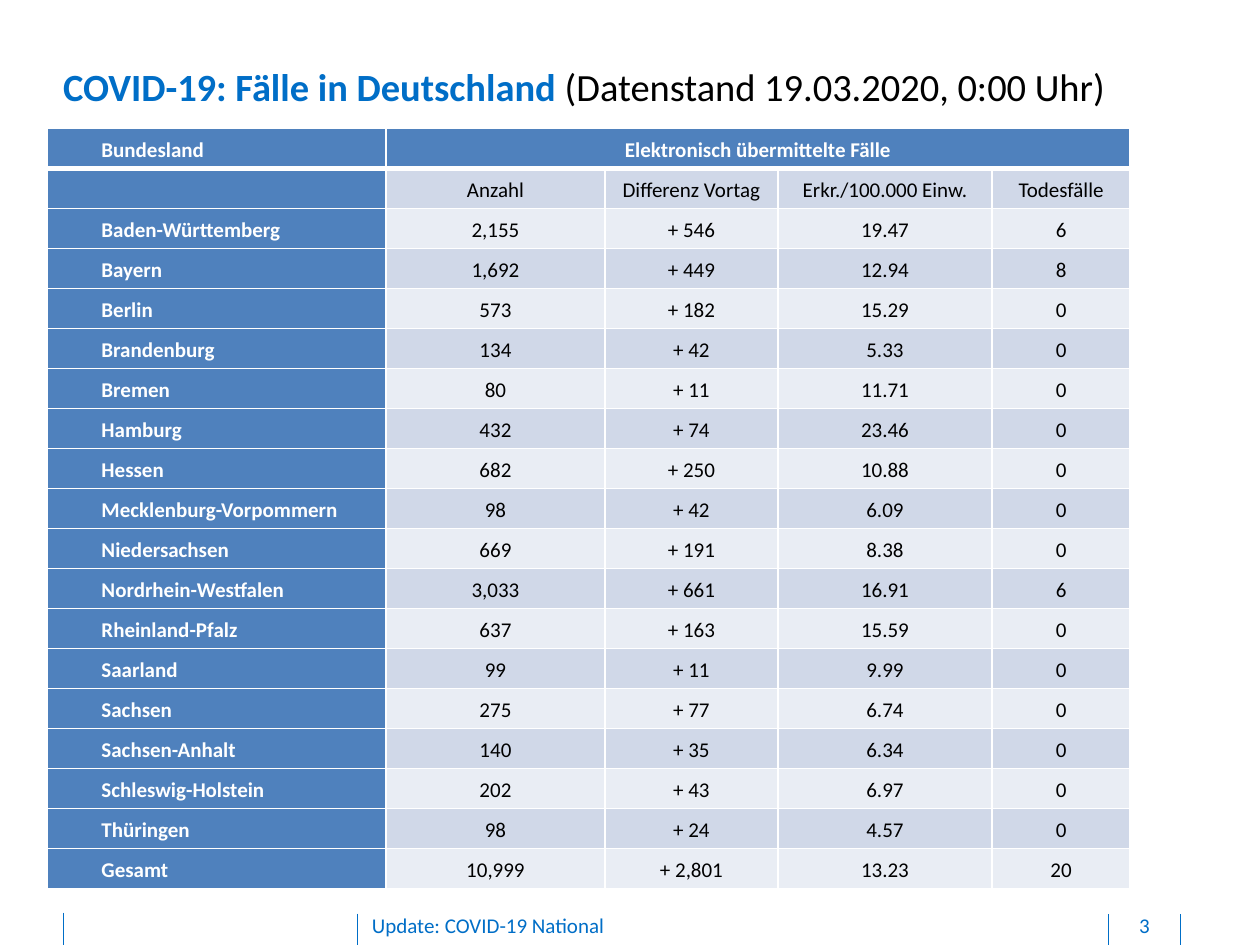
from dataclasses import dataclass
from typing import NamedTuple

from lxml.etree import SubElement
from pptx import Presentation
from pptx.dml.color import RGBColor
from pptx.enum.shapes import MSO_CONNECTOR
from pptx.enum.text import MSO_ANCHOR, MSO_AUTO_SIZE, PP_ALIGN
from pptx.oxml.ns import qn
from pptx.util import Pt


@dataclass(frozen=True)
class Theme:
    font: str = "Calibri"
    blue: str = "006EC7"
    head: str = "4F81BD"
    dark: str = "D0D8E8"
    light: str = "E9EDF4"
    white: str = "FFFFFF"
    black: str = "000000"
    title: float = 22
    body: float = 12


class State(NamedTuple):
    name: str
    cases: str
    change: str
    rate: str
    deaths: str


class Rule(NamedTuple):
    x: float
    top: float


class Label(NamedTuple):
    text: str
    left: float
    width: float
    align: PP_ALIGN


THEME = Theme()
BOTTOM = 540
LEFT, TOP, ROW = 27, 73.5, 22.86
WIDTHS = (193.5, 125.25, 98.75, 122.5, 78.75)
INDENT = 28

RULES = (Rule(204.5, 522), Rule(36, 521.5), Rule(674.5, 522.5), Rule(633.5, 522.5))
LABELS = (
    Label("Update: COVID-19 National", 212.5, 408, PP_ALIGN.LEFT),
    Label("3", 634.5, 39, PP_ALIGN.CENTER),
)
ROWS = (
    State("Bundesland", "Elektronisch übermittelte Fälle", "", "", ""),
    State("", "Anzahl", "Differenz Vortag", "Erkr./100.000 Einw.", "Todesfälle"),
    State("Baden-Württemberg", "2,155", "+ 546", "19.47", "6"),
    State("Bayern", "1,692", "+ 449", "12.94", "8"),
    State("Berlin", "573", "+ 182", "15.29", "0"),
    State("Brandenburg", "134", "+ 42", "5.33", "0"),
    State("Bremen", "80", "+ 11", "11.71", "0"),
    State("Hamburg", "432", "+ 74", "23.46", "0"),
    State("Hessen", "682", "+ 250", "10.88", "0"),
    State("Mecklenburg-Vorpommern", "98", "+ 42", "6.09", "0"),
    State("Niedersachsen", "669", "+ 191", "8.38", "0"),
    State("Nordrhein-Westfalen", "3,033", "+ 661", "16.91", "6"),
    State("Rheinland-Pfalz", "637", "+ 163", "15.59", "0"),
    State("Saarland", "99", "+ 11", "9.99", "0"),
    State("Sachsen", "275", "+ 77", "6.74", "0"),
    State("Sachsen-Anhalt", "140", "+ 35", "6.34", "0"),
    State("Schleswig-Holstein", "202", "+ 43", "6.97", "0"),
    State("Thüringen", "98", "+ 24", "4.57", "0"),
    State("Gesamt", "10,999", "+ 2,801", "13.23", "20"),
)


def write(para, text: str, *, size: float = THEME.body, color: str = THEME.black,
          bold: bool = False, align: PP_ALIGN = PP_ALIGN.LEFT,
          spacing: float | None = None, indent: float = 0) -> None:
    """Add one formatted run to a paragraph."""
    para.alignment = align
    if spacing:
        para.line_spacing = spacing
    if indent:
        props = para._p.get_or_add_pPr()
        props.set("marL", "0")
        props.set("indent", str(Pt(indent)))
    run = para.add_run()
    run.text = text
    font = run.font
    font.name, font.size, font.bold = THEME.font, Pt(size), bold
    font.color.rgb = RGBColor.from_string(color)


def inset(frame, bottom: float = 0) -> None:
    frame.margin_left = frame.margin_right = frame.margin_top = 0
    frame.margin_bottom = Pt(bottom)
    frame.word_wrap = True
    frame.vertical_anchor = MSO_ANCHOR.TOP


def add_title(slide) -> None:
    title = slide.shapes.title
    title.left, title.top, title.width, title.height = Pt(36), Pt(36), Pt(637), Pt(26.5)
    frame = title.text_frame
    inset(frame)
    frame.auto_size = MSO_AUTO_SIZE.SHAPE_TO_FIT_TEXT
    para = frame.paragraphs[0]
    write(para, "COVID-19: Fälle in Deutschland ", size=THEME.title,
          color=THEME.blue, bold=True)
    write(para, "(Datenstand 19.03.2020, 0:00 Uhr)", size=THEME.title)


def add_rule(slide, rule: Rule) -> None:
    line = slide.shapes.add_connector(
        MSO_CONNECTOR.STRAIGHT, Pt(rule.x), Pt(rule.top), Pt(rule.x), Pt(BOTTOM))
    line.line.color.rgb = RGBColor.from_string(THEME.blue)
    line.line.width = Pt(0.5)
    SubElement(line._element.spPr, qn("a:effectLst"))


def add_label(slide, label: Label) -> None:
    box = slide.shapes.add_textbox(Pt(label.left), Pt(521.5), Pt(label.width), Pt(15))
    inset(box.text_frame, bottom=3.6)
    write(box.text_frame.paragraphs[0], label.text, color=THEME.blue, align=label.align)


def edge(cell, side: str, width: float) -> None:
    line = SubElement(cell._tc.get_or_add_tcPr(), qn(f"a:ln{side}"), w=str(Pt(width)))
    fill = SubElement(line, qn("a:solidFill"))
    SubElement(fill, qn("a:srgbClr"), val=THEME.white)


def style(cell, row: int, col: int) -> None:
    """Give a cell its borders, fill and margins by its place in the grid."""
    for side in "LR":
        edge(cell, side, 1)
    edge(cell, "T", 3 if row == 1 else 1)
    edge(cell, "B", 3 if row == 0 else 1)
    band = THEME.dark if row % 2 else THEME.light
    cell.fill.solid()
    cell.fill.fore_color.rgb = RGBColor.from_string(
        THEME.head if row == 0 or col == 0 else band)
    cell.margin_left = cell.margin_right = Pt(3)
    cell.margin_top = cell.margin_bottom = 0
    cell.vertical_anchor = MSO_ANCHOR.MIDDLE


def add_grid(slide) -> None:
    frame = slide.shapes.add_table(len(ROWS), len(WIDTHS), Pt(LEFT), Pt(TOP),
                                   Pt(sum(WIDTHS)), Pt(ROW * len(ROWS)))
    table = frame.table
    for col, width in zip(table.columns, WIDTHS):
        col.width = Pt(width)
    for r, state in enumerate(ROWS):
        table.rows[r].height = Pt(ROW)
        for c, text in enumerate(state):
            cell = table.cell(r, c)
            style(cell, r, c)
            if not text:
                continue
            head = r == 0 or c == 0
            write(cell.text_frame.paragraphs[0], text, bold=head, spacing=1.15,
                  color=THEME.white if head else THEME.black,
                  align=PP_ALIGN.CENTER if c else PP_ALIGN.LEFT,
                  indent=0 if c else INDENT)
    table.cell(0, 1).merge(table.cell(0, len(WIDTHS) - 1))


def main() -> None:
    deck = Presentation()
    deck.slide_width, deck.slide_height = Pt(720), Pt(BOTTOM)
    slide = deck.slides.add_slide(deck.slide_layouts[5])
    for rule in RULES:
        add_rule(slide, rule)
    add_title(slide)
    for label in LABELS:
        add_label(slide, label)
    add_grid(slide)
    deck.save("out.pptx")


if __name__ == "__main__":
    main()
